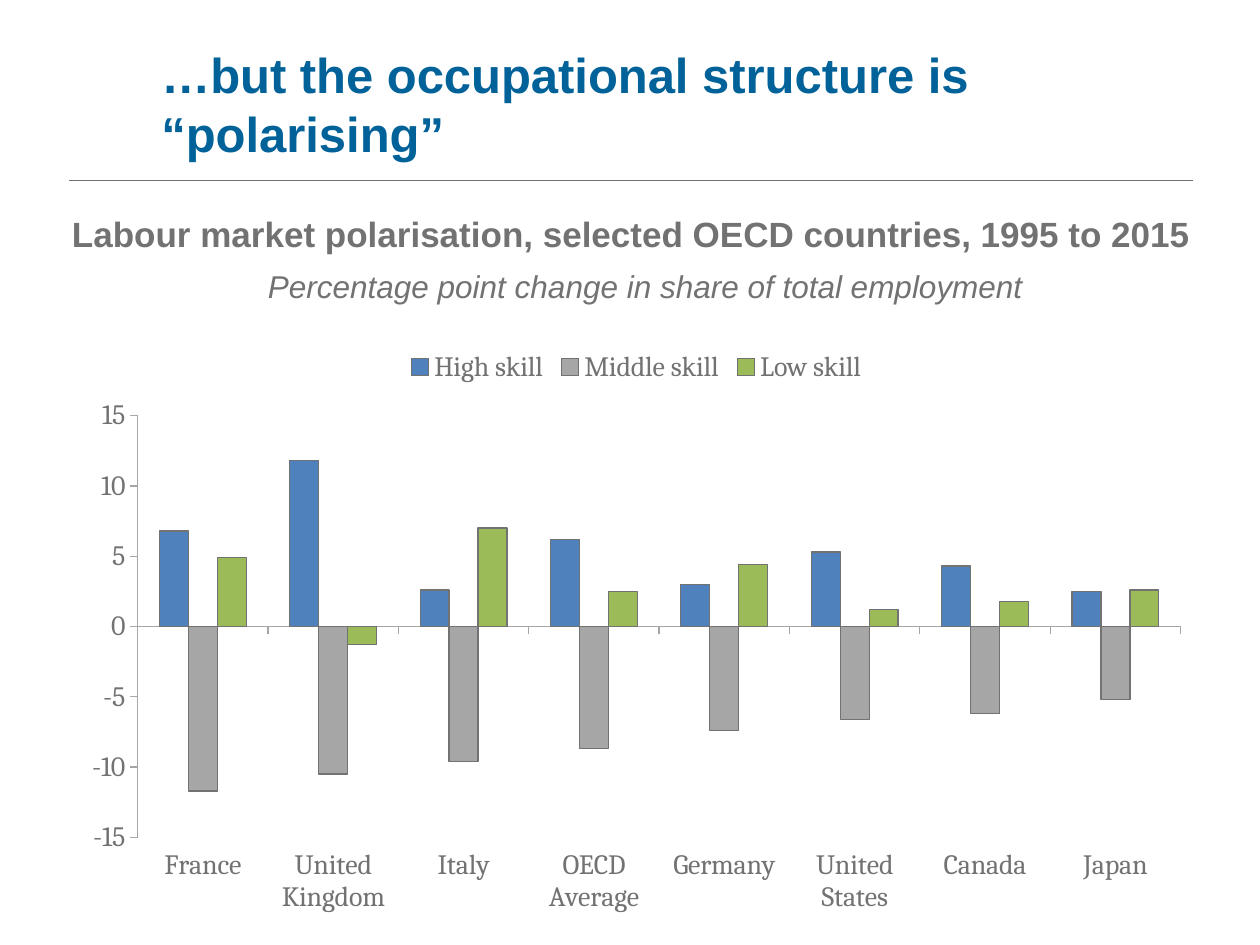
from lxml.etree import SubElement
from pptx import Presentation
from pptx.chart.data import CategoryChartData
from pptx.dml.color import RGBColor
from pptx.enum.chart import XL_CHART_TYPE as ChartType, XL_LEGEND_POSITION as LegendPos
from pptx.enum.chart import XL_TICK_LABEL_POSITION as LabelPos, XL_TICK_MARK as TickMark
from pptx.enum.shapes import MSO_CONNECTOR as Connector
from pptx.enum.text import MSO_ANCHOR as Anchor, PP_ALIGN as Align
from pptx.oxml.ns import qn
from pptx.util import Pt

COLORS = {"title": "006299", "grey": "727272", "axis": "A6A6A6",
          "High skill": "4F81BD", "Middle skill": "A6A6A6", "Low skill": "9BBB59"}

COUNTRIES = ["France", "United Kingdom", "Italy", "OECD Average",
             "Germany", "United States", "Canada", "Japan"]
SKILL_CHANGES = {
    "High skill": [6.8, 11.8, 2.6, 6.2, 3, 5.3, 4.3, 2.5],
    "Middle skill": [-11.7, -10.5, -9.6, -8.7, -7.4, -6.6, -6.2, -5.2],
    "Low skill": [4.9, -1.3, 7, 2.5, 4.4, 1.2, 1.8, 2.6],
}


class SlideBuilder:
    text_font = "Arial"
    chart_font = "Cambria"

    def __init__(self, slide):
        self.slide = slide

    def color(self, key):
        return RGBColor.from_string(COLORS[key])

    def style_font(self, font, name, size, color, bold=False, italic=False):
        font.name, font.size = name, Pt(size)
        font.bold, font.italic = bold, italic
        font.color.rgb = self.color(color)

    def style_line(self, line, color, width):
        line.color.rgb = self.color(color)
        line.width = Pt(width)

    def fill_text(self, frame, text, align, size, color, **emphasis):
        frame.word_wrap = True
        frame.text = text
        paragraph = frame.paragraphs[0]
        paragraph.alignment = align
        self.style_font(paragraph.runs[0].font, self.text_font, size, color, **emphasis)

    def title(self, text, left, top, width, height):
        heading = self.slide.shapes.title
        heading.left, heading.top = Pt(left), Pt(top)
        heading.width, heading.height = Pt(width), Pt(height)
        heading.text_frame.vertical_anchor = Anchor.MIDDLE
        self.fill_text(heading.text_frame, text, Align.LEFT, 28, "title", bold=True)

    def caption(self, text, left, top, width, height, size, **emphasis):
        box = self.slide.shapes.add_textbox(Pt(left), Pt(top), Pt(width), Pt(height))
        self.fill_text(box.text_frame, text, Align.CENTER, size, "grey", **emphasis)

    def rule(self, left, top, width):
        rule = self.slide.shapes.add_connector(
            Connector.STRAIGHT, Pt(left), Pt(top), Pt(left + width), Pt(top))
        self.style_line(rule.line, "grey", 0.5)
        SubElement(rule._element.spPr, qn("a:effectLst"))

    def column_chart(self, categories, series_values, left, top, width, height):
        data = CategoryChartData(number_format="General")
        data.categories = categories
        for name, values in series_values.items():
            data.add_series(name, values)
        chart = self.slide.shapes.add_chart(
            ChartType.COLUMN_CLUSTERED, Pt(left), Pt(top), Pt(width), Pt(height), data).chart
        self.style_font(chart.font, self.chart_font, 16, "grey")
        chart.has_title = False
        chart.has_legend = True
        chart.legend.position = LegendPos.TOP
        chart.legend.include_in_layout = False

        # Columns
        plot = chart.plots[0]
        plot.vary_by_categories = False
        plot.gap_width, plot.overlap = 150, 0
        for series in plot.series:
            series.invert_if_negative = False
            series.format.fill.solid()
            series.format.fill.fore_color.rgb = self.color(series.name)
            self.style_line(series.format.line, "grey", 0.75)

        # Axes
        for axis in (chart.category_axis, chart.value_axis):
            axis.has_major_gridlines = False
            axis.major_tick_mark = TickMark.OUTSIDE
            axis.minor_tick_mark = TickMark.NONE
            self.style_line(axis.format.line, "axis", 0.75)
        chart.category_axis.tick_label_position = LabelPos.LOW
        chart.value_axis.minimum_scale, chart.value_axis.maximum_scale = -15, 15
        chart.value_axis.major_unit = 5


def main():
    deck = Presentation()
    deck.slide_width, deck.slide_height = Pt(720), Pt(540)
    builder = SlideBuilder(deck.slides.add_slide(deck.slide_layouts[5]))

    # Heading
    builder.rule(39.6, 103, 642.2)
    builder.title("…but the occupational structure is “polarising”", 85, 18.7, 635, 80.6)

    # Chart with its captions
    builder.column_chart(COUNTRIES, SKILL_CHANGES, 39.6, 192.2, 648, 336.2)
    builder.caption("Labour market polarisation, selected OECD countries, 1995 to 2015",
                    23.8, 118.1, 673.9, 31.5, 20, bold=True)
    builder.caption("Percentage point change in share of total employment",
                    77.8, 149, 581.8, 29, 18, italic=True)

    deck.save("out.pptx")


if __name__ == "__main__":
    main()
